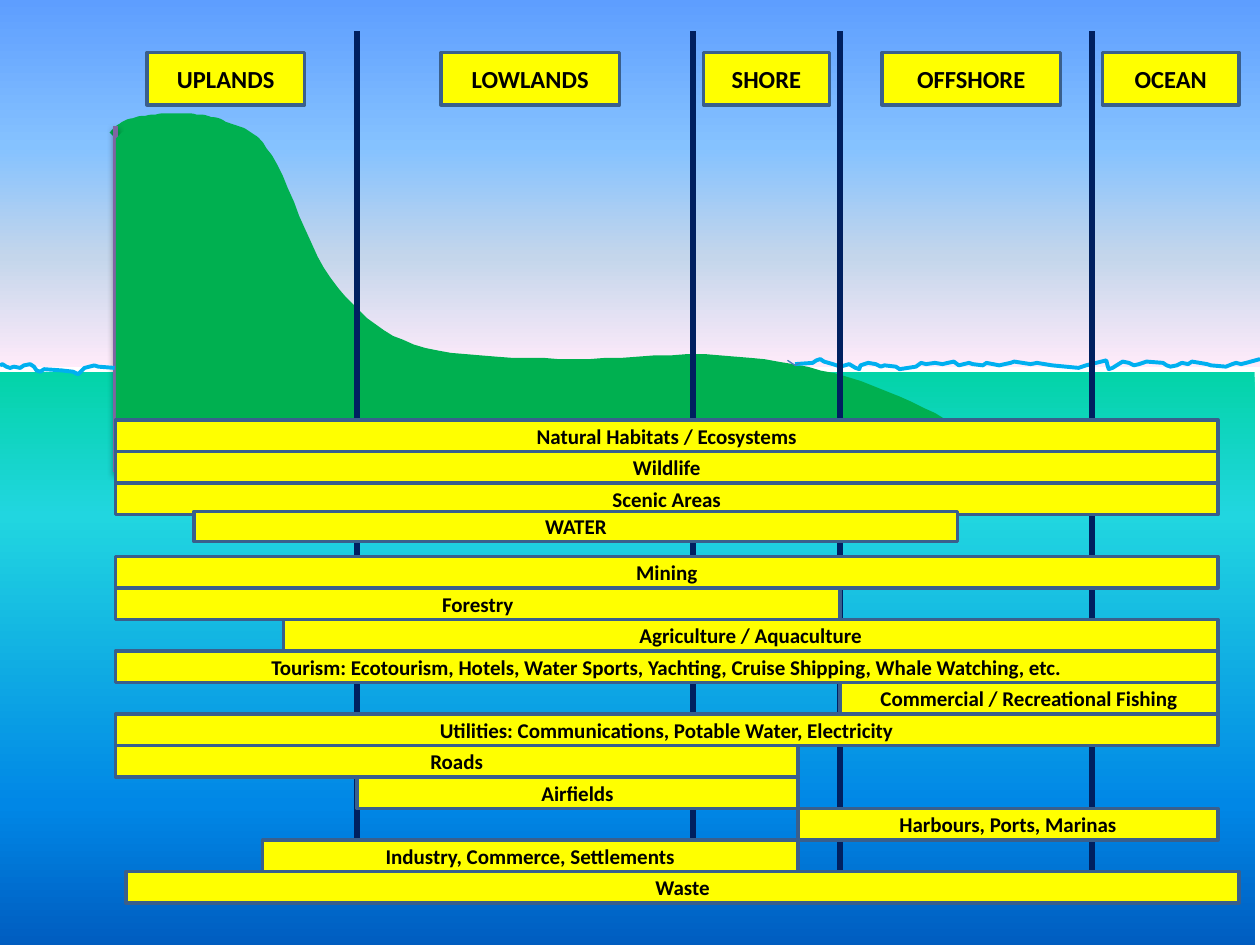
import pptx
import pptx.dml.color
import pptx.enum.shapes
import pptx.enum.text
import pptx.oxml
import pptx.oxml.ns
import pptx.util

Cm = pptx.util.Cm
Pt = pptx.util.Pt
RGBColor = pptx.dml.color.RGBColor
MSO_SHAPE = pptx.enum.shapes.MSO_SHAPE
qn = pptx.oxml.ns.qn

YELLOW = RGBColor(0xFF, 0xFF, 0x00)
FRAME = RGBColor(0x3A, 0x5F, 0x8C)
BLACK = RGBColor(0x00, 0x00, 0x00)
GREEN = RGBColor(0x00, 0xB0, 0x50)
NAVY = RGBColor(0x00, 0x20, 0x60)
PURPLE = RGBColor(0x80, 0x64, 0xA2)
WAVE_BLUE = RGBColor(0x00, 0xB0, 0xF0)
STEEL = RGBColor(0x4B, 0x7E, 0xBC)
FONT = "Calibri"

# Boxes, bars and dividers sit on a grid of 120 by 90 units.
UNIT = 25.4 / 120
SKY = [(0, "5E9EFF"), (40, "85C2FF"), (70, "C4D6EB"), (100, "FFEBFA")]
WATER = [(0, "03D4A8"), (25, "21D6E0"), (75, "0087E6"), (100, "005CBF")]
DIVIDERS = [34, 66, 80, 104]
ZONES = [("UPLANDS", 14, 15), ("LOWLANDS", 42, 17), ("SHORE", 67, 12),
         ("OFFSHORE", 84, 17), ("OCEAN", 105, 13)]  # text, left, width

BAR_HEIGHT = 3
RESOURCES_TOP = 40
RESOURCES = [("Natural Habitats / Ecosystems", 11, 105), ("Wildlife", 11, 105),
             ("Scenic Areas", 11, 105)]
ACTIVITIES_TOP = 53
ACTIVITIES = [
    ("Mining", 11, 105),
    ("Forestry", 11, 69),
    ("Agriculture / Aquaculture", 27, 89),
    ("Tourism: Ecotourism, Hotels, Water Sports, Yachting, Cruise Shipping, "
     "Whale Watching, etc.", 11, 105),
    ("Commercial / Recreational Fishing", 80, 36),
    ("Utilities: Communications, Potable Water, Electricity", 11, 105),
    ("Roads", 11, 65),
    ("Airfields", 34, 42),
    ("Harbours, Ports, Marinas", 76, 40),
    ("Industry, Commerce, Settlements", 25, 51),
    ("Waste", 12, 106),
]

# Outlines are in steps of 0.03 cm (a hundredth of an inch).
OUTLINE_STEP = Cm(2.54) / 100
LAND_BOTTOM = 375
RIDGE_START = (92, 110)
RIDGE_CURVES = [  # two control points and an end point for each curve
    ((96, 106), (100, 102), (109, 100)), ((119, 98), (136, 96), (148, 97)),
    ((160, 98), (169, 99), (179, 104)), ((190, 109), (197, 107), (210, 127)),
    ((223, 147), (238, 199), (257, 225)), ((277, 251), (295, 269), (326, 280)),
    ((357, 291), (402, 290), (443, 292)), ((484, 293), (531, 286), (571, 289)),
    ((611, 291), (648, 299), (681, 309)), ((714, 320), (748, 340), (770, 350)),
    ((791, 360), (803, 367), (809, 371)),
]
SEA_WAVES = [
    (631, 289), (645, 288), (648, 286), (651, 285), (654, 287), (661, 289), (667, 291),
    (674, 289), (679, 292), (682, 293), (683, 290), (689, 288), (695, 289), (699, 291),
    (702, 290), (711, 291), (714, 293), (727, 291), (731, 288), (735, 289), (742, 288),
    (748, 289), (757, 287), (761, 290), (769, 288), (772, 289), (780, 290), (783, 288),
    (793, 290), (802, 288), (805, 287), (818, 289), (823, 288), (835, 290), (856, 292),
    (862, 290), (866, 289), (878, 286), (879, 290), (880, 293), (883, 292), (891, 287),
    (896, 288), (900, 290), (904, 289), (910, 287), (923, 288), (926, 290), (929, 291),
    (934, 290), (938, 288), (943, 289), (946, 287), (958, 289), (961, 290), (973, 291),
    (978, 289), (981, 288), (985, 289), (989, 288), (1000, 285)]
INLAND_WAVES = [
    (91, 292), (78, 291), (75, 290), (67, 292), (62, 297), (58, 295), (49, 294),
    (35, 293), (32, 295), (29, 294), (27, 291), (24, 289), (19, 290), (16, 292),
    (11, 291), (8, 292), (5, 291), (2, 289), (0, 290)]
SHORE_RIPPLE = [(635, 288), (631, 290), (625, 286)]


def grid(value):
    return Cm(value * UNIT)


def style(shape, fill=None, line=None, line_width=1):
    shape.shadow.inherit = False
    if fill is None:
        shape.fill.background()
    else:
        shape.fill.solid()
        shape.fill.fore_color.rgb = fill
    if line is None:
        shape.line.fill.background()
    else:
        shape.line.color.rgb = line
        shape.line.width = Pt(line_width)


def add_rectangle(slide, left, top, width, height, **look):
    shape = slide.shapes.add_shape(MSO_SHAPE.RECTANGLE, grid(left), grid(top),
                                   grid(width), grid(height))
    style(shape, **look)
    return shape


def add_backdrop(slide, left, top, width, height, stops):
    """Rectangle with a gradient running from top to bottom."""
    shape = add_rectangle(slide, left, top, width, height)
    shape.fill.gradient()
    shape.fill.gradient_angle = 270
    stop_list = shape._element.spPr.find(qn("a:gradFill")).find(qn("a:gsLst"))
    for stop in list(stop_list):
        stop_list.remove(stop)
    for percent, color in stops:
        stop_list.append(pptx.oxml.parse_xml(
            f'<a:gs {pptx.oxml.ns.nsdecls("a")} pos="{percent * 1000}">'
            f'<a:srgbClr val="{color}"/></a:gs>'))


def write_text(shape, text, size, color=BLACK, bold=True):
    frame = shape.text_frame
    frame.word_wrap = True
    frame.vertical_anchor = pptx.enum.text.MSO_ANCHOR.MIDDLE
    paragraph = frame.paragraphs[0]
    paragraph.alignment = pptx.enum.text.PP_ALIGN.CENTER
    run = paragraph.add_run()
    run.text = text
    run.font.name = FONT
    run.font.size = Pt(size)
    run.font.bold = bold
    run.font.color.rgb = color


def add_label(slide, text, left, top, width, height=BAR_HEIGHT, size=12):
    box = add_rectangle(slide, left, top, width, height,
                        fill=YELLOW, line=FRAME, line_width=2)
    write_text(box, text, size)


def add_stack(slide, bars, top):
    for row, (text, left, width) in enumerate(bars):
        add_label(slide, text, left, top + row * BAR_HEIGHT, width)


def add_upright(slide, x, top, bottom, color, shadow=""):
    line = slide.shapes.add_connector(pptx.enum.shapes.MSO_CONNECTOR.STRAIGHT,
                                      grid(x), grid(top), grid(x), grid(bottom))
    line.line.color.rgb = color
    line.line.width = Pt(3)
    line._element.spPr.append(pptx.oxml.parse_xml(
        f'<a:effectLst {pptx.oxml.ns.nsdecls("a")}>{shadow}</a:effectLst>'))


def add_outline(slide, points, close=False, **look):
    builder = slide.shapes.build_freeform(*points[0], scale=OUTLINE_STEP)
    builder.add_line_segments(points[1:], close=close)
    style(builder.convert_to_shape(), **look)


def trace_curves(start, curves, steps=10):
    """Points along a chain of cubic Bezier curves."""
    points = [start]
    for first, second, end in curves:
        begin = points[-1]
        for step in range(1, steps + 1):
            t = step / steps
            weights = ((1 - t) ** 3, 3 * t * (1 - t) ** 2, 3 * t * t * (1 - t), t ** 3)
            points.append(tuple(
                sum(weight * value for weight, value in zip(weights, values))
                for values in zip(begin, first, second, end)))
    return points


def main():
    presentation = pptx.Presentation()
    presentation.slide_width, presentation.slide_height = grid(120), grid(90)
    slide = presentation.slides.add_slide(presentation.slide_layouts[6])

    add_backdrop(slide, -0.5, 35.4, 120, 55, WATER)
    add_backdrop(slide, 0, 0, 120, 35, SKY)

    ridge = trace_curves(RIDGE_START, RIDGE_CURVES)
    add_outline(slide, ridge, line=GREEN, line_width=10)
    add_upright(slide, 11, 12, 45, PURPLE, shadow=(
        '<a:outerShdw blurRad="40000" dist="23000" dir="5400000" rotWithShape="0">'
        '<a:srgbClr val="000000"><a:alpha val="35000"/></a:srgbClr></a:outerShdw>'))
    land = ridge + [(ridge[-1][0], LAND_BOTTOM), (RIDGE_START[0], LAND_BOTTOM)]
    add_outline(slide, land, close=True, fill=GREEN)

    for waves in (SEA_WAVES, INLAND_WAVES):
        add_outline(slide, waves, line=WAVE_BLUE, line_width=2.25)
    add_outline(slide, SHORE_RIPPLE, line=STEEL, line_width=0.75)

    for x in DIVIDERS:
        add_upright(slide, x, 3, 84, NAVY)
    for text, left, width in ZONES:
        add_label(slide, text, left, 5, width, height=5, size=14)
    add_stack(slide, ACTIVITIES, ACTIVITIES_TOP)
    add_stack(slide, RESOURCES, RESOURCES_TOP)
    add_label(slide, "WATER", 18.5, 48.7, 72.7, height=2.9)

    presentation.save("out.pptx")


if __name__ == "__main__":
    main()
